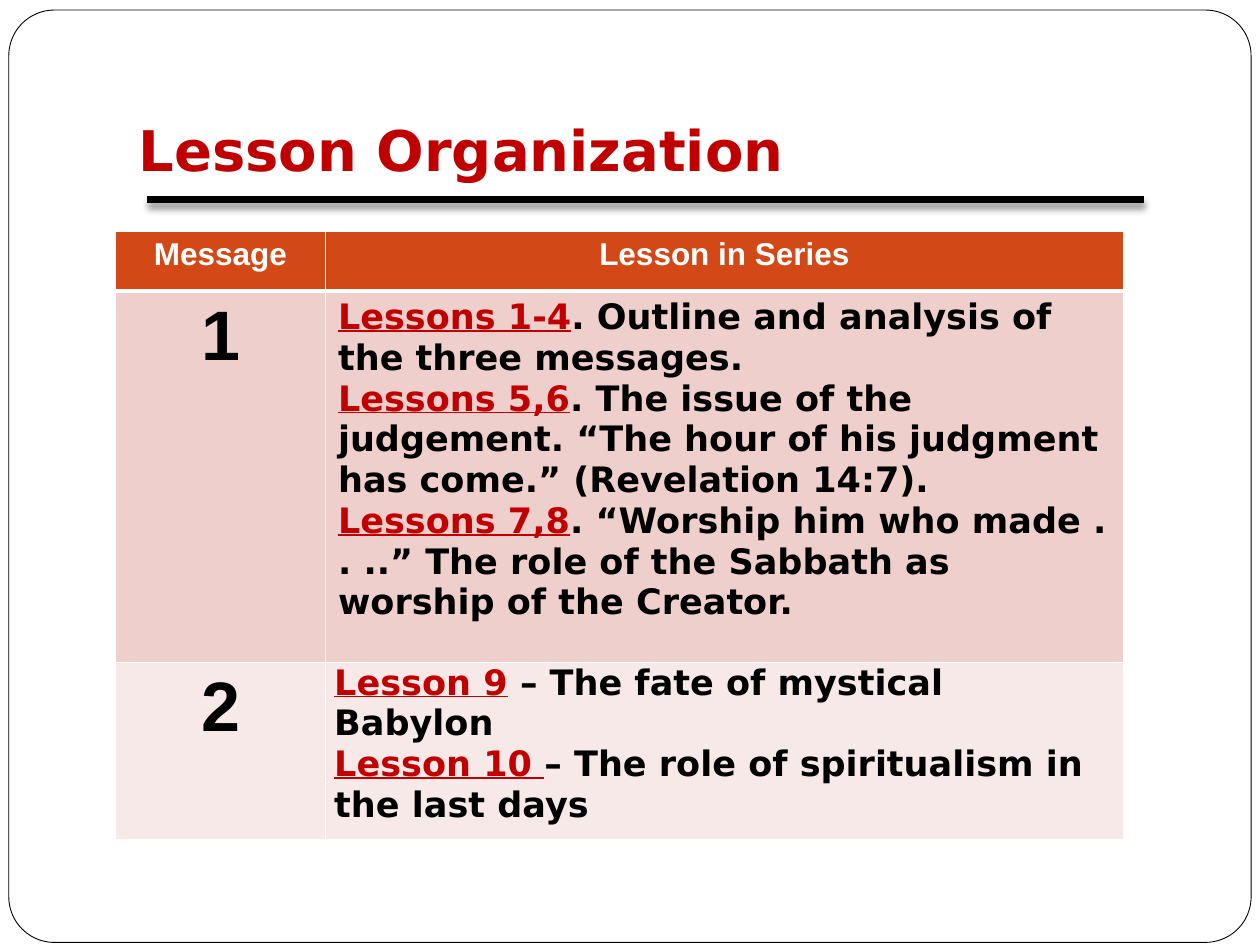
import pptx
import pptx.dml.color
import pptx.enum.dml
import pptx.enum.shapes
import pptx.enum.text
import pptx.oxml
import pptx.oxml.ns
import pptx.util

RGBColor = pptx.dml.color.RGBColor
Pt = pptx.util.Pt
Inches = pptx.util.Inches
PP_ALIGN = pptx.enum.text.PP_ALIGN

WHITE = RGBColor(0xFF, 0xFF, 0xFF)
BLACK = RGBColor(0, 0, 0)
RED = RGBColor(0xC0, 0, 0)
ORANGE = RGBColor(0xD3, 0x48, 0x17)
ROSE = RGBColor(0xEF, 0xCF, 0xCC)
PALE_ROSE = RGBColor(0xF7, 0xE9, 0xE8)

HEADING_FONT = "DejaVu Sans"
LABEL_FONT = "Arial"
UNITS_PER_INCH = 12  # the slide is a grid of 120 columns by 90 rows

HEADERS = ("Message", "Lesson in Series")
FIRST_LESSONS = (
    ("Lessons 1-4", ". Outline and analysis of the three messages."),
    ("Lessons 5,6", ". The issue of the judgement. “The hour of his judgment "
                    "has come.” (Revelation 14:7)."),
    ("Lessons 7,8", ". “Worship him who made . . ..” The role of the Sabbath "
                    "as worship of the Creator."),
)
SECOND_LESSONS = (
    ("Lesson 9", " – The fate of mystical Babylon"),
    ("Lesson 10 ", "– The role of spiritualism in the last days"),
)


def grid(units):
    return Inches(units / UNITS_PER_INCH)


def add_xml(parent, tag, content="", attributes=""):
    namespace = pptx.oxml.ns.nsdecls("a")
    parent.append(pptx.oxml.parse_xml(
        f"<a:{tag} {namespace} {attributes}>{content}</a:{tag}>"))


class LessonSlide:
    def __init__(self, presentation):
        self.slide = presentation.slides.add_slide(presentation.slide_layouts[5])
        self.shapes = self.slide.shapes

    def style(self, paragraph, size, font, color=None, align=PP_ALIGN.LEFT):
        paragraph.alignment = align
        paragraph.font.size = Pt(size)
        paragraph.font.name = font
        paragraph.font.bold = True
        if color is not None:
            paragraph.font.color.rgb = color

    def frame(self, margin_x, margin_y, width, height):
        border = self.shapes.add_shape(
            pptx.enum.shapes.MSO_SHAPE.ROUNDED_RECTANGLE,
            *map(grid, (margin_x, margin_y, width, height)))
        border.adjustments[0] = 0.049
        border.shadow.inherit = False
        border.fill.solid()
        border.fill.fore_color.rgb = WHITE
        border.line.color.rgb = BLACK
        border.line.width = Pt(0.5)

    def rule(self, left, right, top):
        line = self.shapes.add_connector(
            pptx.enum.shapes.MSO_CONNECTOR.STRAIGHT,
            *map(grid, (left, top, right, top)))
        line.line.color.rgb = BLACK
        line.line.width = Pt(4.5)
        add_xml(line.element.spPr, "effectLst",
                f'<a:outerShdw blurRad="{Pt(4)}" dist="{Pt(3)}" dir="5400000" '
                'rotWithShape="0"><a:srgbClr val="000000">'
                '<a:alpha val="40000"/></a:srgbClr></a:outerShdw>')

    def title(self, text, left, top, width, height):
        heading = self.shapes.title
        heading.left, heading.top, heading.width, heading.height = map(
            grid, (left, top, width, height))
        heading.element.getparent().append(heading.element)  # in front of the frame
        box = heading.text_frame
        box.text = text
        box.word_wrap = True
        box.auto_size = pptx.enum.text.MSO_AUTO_SIZE.NONE
        box.vertical_anchor = pptx.enum.text.MSO_ANCHOR.BOTTOM
        box.margin_left = box.margin_right = box.margin_bottom = Inches(0.1)
        box.margin_top = Inches(0.05)
        self.style(box.paragraphs[0], 32, HEADING_FONT, RED)

    def table(self, left, top, columns, rows):
        table = self.shapes.add_table(
            len(rows), len(columns),
            *map(grid, (left, top, sum(columns), sum(rows)))).table
        for column, width in zip(table.columns, columns):
            column.width = grid(width)
        for row, height in zip(table.rows, rows):
            row.height = grid(height)
        return table

    def paint_row(self, table, row, color):
        """Fill a row and edge it in white, with a heavy line below the header."""
        widths = {"L": 1, "R": 1, "T": 3 if row == 1 else 1, "B": 3 if row == 0 else 1}
        for cell in table.rows[row].cells:
            properties = cell._tc.get_or_add_tcPr()
            for side, width in widths.items():
                add_xml(properties, f"ln{side}",
                        f'<a:solidFill><a:srgbClr val="{WHITE}"/></a:solidFill>',
                        f'w="{Pt(width)}"')
            cell.fill.solid()
            cell.fill.fore_color.rgb = color

    def label(self, cell, text, size, color):
        cell.text = text
        self.style(cell.text_frame.paragraphs[0], size, LABEL_FONT, color,
                   PP_ALIGN.CENTER)

    def lessons(self, cell, entries):
        box = cell.text_frame
        for number, (lesson, topic) in enumerate(entries):
            paragraph = box.add_paragraph() if number else box.paragraphs[0]
            self.style(paragraph, 20, HEADING_FONT)
            for text, color, underline in ((lesson, RED, True), (topic, BLACK, False)):
                run = paragraph.add_run()
                run.text = text
                run.font.color.rgb = color
                run.font.underline = underline


def main():
    presentation = pptx.Presentation()
    presentation.slide_width, presentation.slide_height = grid(120), grid(90)

    page = LessonSlide(presentation)
    page.frame(0.84, 0.96, 118.32, 88.8)
    page.rule(14, 109, 19)
    page.title("Lesson Organization", 12, 4, 77, 14.6)

    schedule = page.table(11, 22, columns=(20, 76), rows=(5.7, 35.4, 16.9))
    for row, color in enumerate((ORANGE, ROSE, PALE_ROSE)):
        page.paint_row(schedule, row, color)
    for column, header in enumerate(HEADERS):
        page.label(schedule.cell(0, column), header, 18, WHITE)
    for message, entries in enumerate((FIRST_LESSONS, SECOND_LESSONS), start=1):
        page.label(schedule.cell(message, 0), str(message), 40, BLACK)
        page.lessons(schedule.cell(message, 1), entries)

    last_lessons = schedule.cell(2, 1)
    last_lessons.margin_left = last_lessons.margin_right = Inches(0.07)
    last_lessons.margin_top = last_lessons.margin_bottom = 0

    presentation.save("out.pptx")


if __name__ == "__main__":
    main()
